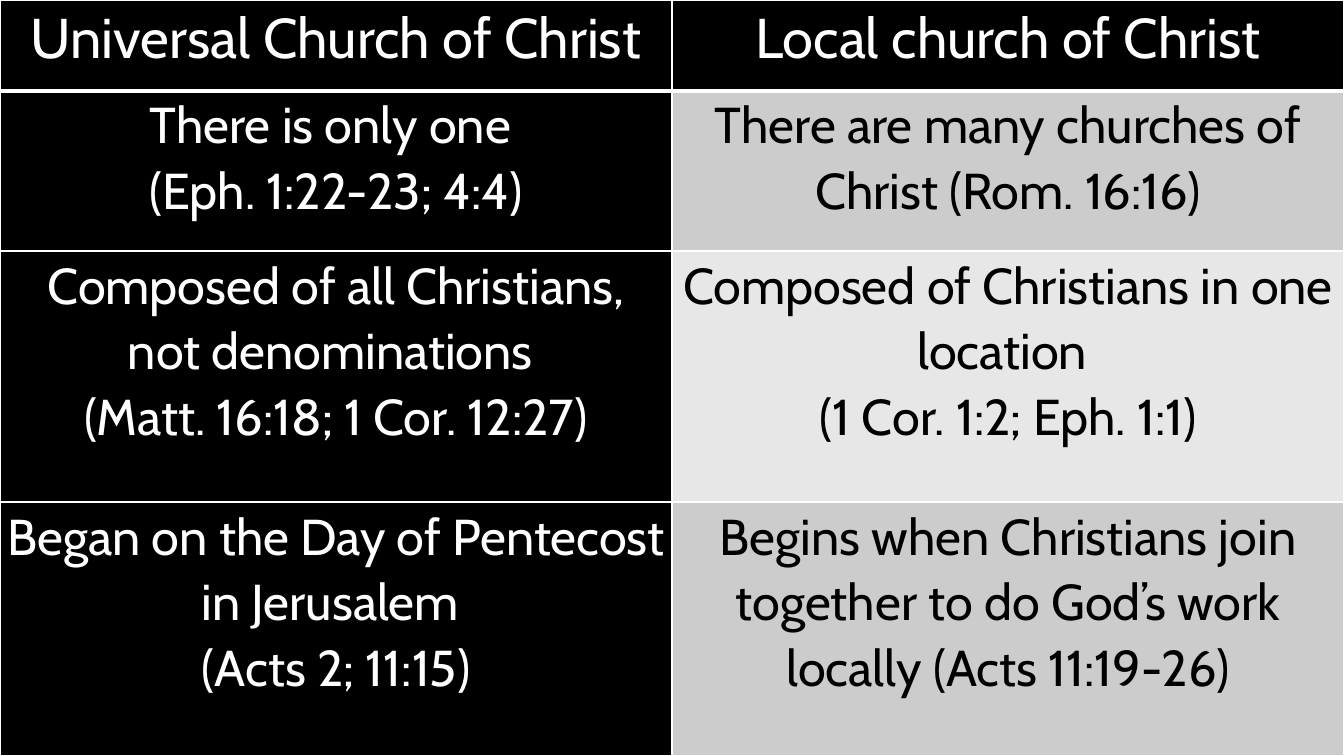
from lxml.etree import SubElement
from pptx import Presentation
from pptx.dml.color import RGBColor
from pptx.enum.text import PP_ALIGN
from pptx.oxml.ns import qn
from pptx.util import Pt

# Content: universal church, local church
COMPARISON = [
    ("Universal Church of Christ", "Local church of Christ"),
    ("There is only one \n(Eph. 1:22-23; 4:4)",
     "There are many churches of Christ (Rom. 16:16)"),
    ("Composed of all Christians, not denominations \n(Matt. 16:18; 1 Cor. 12:27)",
     "Composed of Christians in one location \n(1 Cor. 1:2; Eph. 1:1)"),
    ("Began on the Day of Pentecost in Jerusalem \n(Acts 2; 11:15)",
     "Begins when Christians join together to do God’s work locally (Acts 11:19-26)"),
]

BLACK = RGBColor(0x00, 0x00, 0x00)
WHITE = RGBColor(0xFF, 0xFF, 0xFF)
DARK_BAND = RGBColor(0xCC, 0xCC, 0xCC)
LIGHT_BAND = RGBColor(0xE7, 0xE7, 0xE7)

WIDTH, HEIGHT = 960, 540
ROW_HEIGHTS = [64.8, 114.5, 179.3, 181.4]
FONT = "Cabin"


def add_borders(cell, top, bottom):
    """Draw white cell borders; the schema wants them before the fill."""
    properties = cell._tc.get_or_add_tcPr()
    for side, weight in (("L", 1), ("R", 1), ("T", top), ("B", bottom)):
        border = SubElement(properties, qn(f"a:ln{side}"), w=str(Pt(weight)))
        solid = SubElement(border, qn("a:solidFill"))
        SubElement(solid, qn("a:srgbClr"), val=str(WHITE))


def fill_cell(cell, text, size, color, background):
    cell.margin_left = cell.margin_right = Pt(5)
    cell.margin_top = cell.margin_bottom = 0
    cell.fill.solid()
    cell.fill.fore_color.rgb = background
    cell.text = text
    for paragraph in cell.text_frame.paragraphs:
        paragraph.alignment = PP_ALIGN.CENTER
        paragraph.line_spacing = 1.07
        paragraph.font.name = FONT
        paragraph.font.size = Pt(size)
        paragraph.font.bold = False
        paragraph.font.color.rgb = color


# Slide
deck = Presentation()
deck.slide_width, deck.slide_height = Pt(WIDTH), Pt(HEIGHT)
slide = deck.slides.add_slide(deck.slide_layouts[6])

# Comparison table over the whole slide
churches = slide.shapes.add_table(
    len(COMPARISON), 2, 0, 0, Pt(WIDTH), Pt(HEIGHT)).table
for row, height in zip(churches.rows, ROW_HEIGHTS):
    row.height = Pt(height)

for r, points in enumerate(COMPARISON):
    for c, point in enumerate(points):
        cell = churches.cell(r, c)
        on_black = r == 0 or c == 0
        band = DARK_BAND if r % 2 else LIGHT_BAND
        add_borders(cell, top=3 if r == 1 else 1, bottom=3 if r == 0 else 1)
        fill_cell(cell, point, 40 if r == 0 else 36,
                  WHITE if on_black else BLACK, BLACK if on_black else band)

deck.save("out.pptx")
